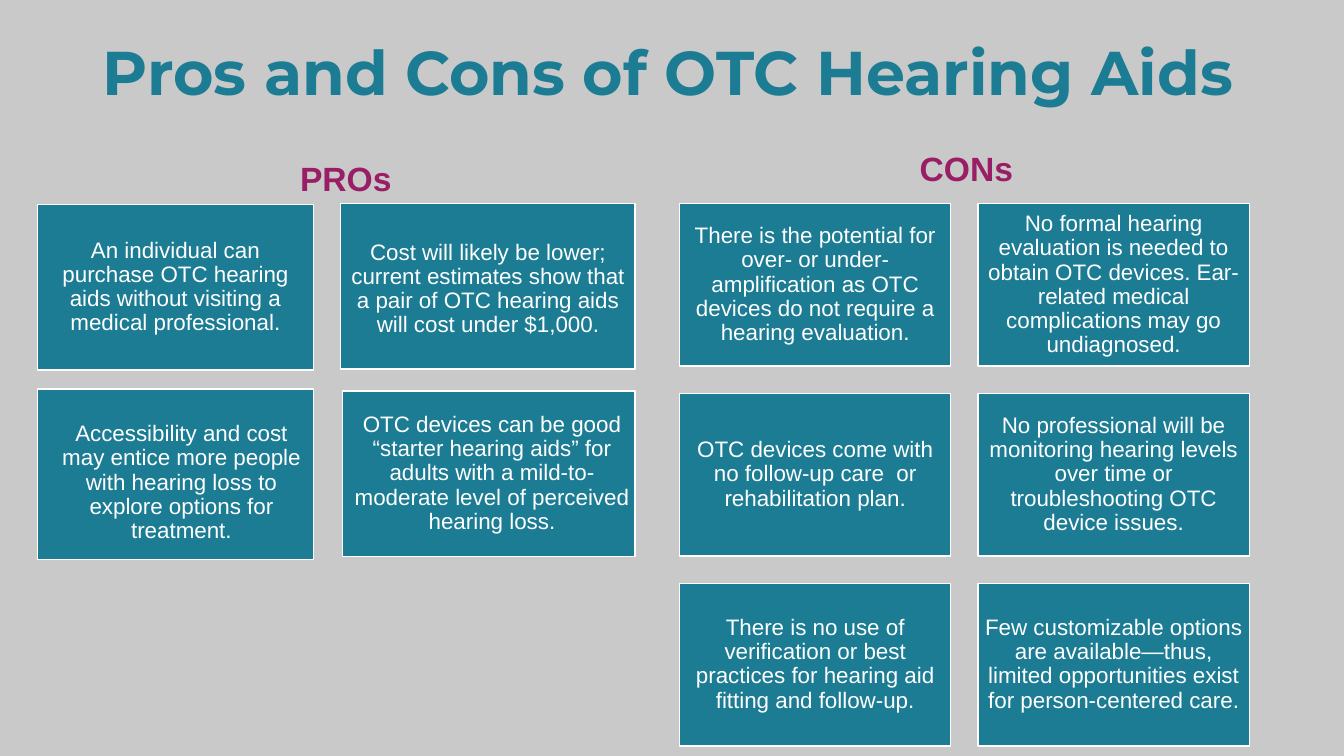
from pptx import Presentation
from pptx.dml.color import RGBColor
from pptx.enum.shapes import MSO_SHAPE
from pptx.enum.text import MSO_ANCHOR, PP_ALIGN
from pptx.util import Inches, Pt

TEAL = RGBColor(0x1B, 0x7C, 0x93)
MAGENTA = RGBColor(0x99, 0x1E, 0x66)
WHITE = RGBColor(0xFF, 0xFF, 0xFF)
GREY = RGBColor(0xC9, 0xC9, 0xC9)

# Each pro: text, place inside the region (left, top, width, height),
# and text margins (left, top, right, bottom)
PROS = [
    ("An individual can purchase OTC hearing aids without visiting a medical professional.",
     (0, 0.01, 2.74, 1.64), (0.06, 0.06, 0.06, 0.06)),
    ("Cost will likely be lower; current estimates show that a pair of OTC hearing aids "
     "will cost under $1,000.",
     (3.01, 0, 2.92, 1.64), (0.06, 0.12, 0.06, 0.06)),
    ("Accessibility and cost may entice more people with hearing loss to explore options "
     "for treatment.",
     (0, 1.84, 2.74, 1.69), (0.17, 0.23, 0.05, 0.06)),
    ("OTC devices can be good “starter hearing aids” for adults with a mild-to-moderate "
     "level of perceived hearing loss.",
     (3.03, 1.86, 2.9, 1.64), (0.06, 0.06, 0, 0.06)),
]
CONS = [
    "There is the potential for over- or under-amplification as OTC devices do not require "
    "a hearing evaluation.",
    "No formal hearing evaluation is needed to obtain OTC devices. Ear-related medical "
    "complications may go undiagnosed.",
    "OTC devices come with no follow-up care  or rehabilitation plan.",
    "No professional will be monitoring hearing levels over time or troubleshooting OTC "
    "device issues.",
    "There is no use of verification or best practices for hearing aid fitting and follow-up.",
    "Few customizable options are available—thus, limited opportunities exist for "
    "person-centered care.",
]


def write(shape, text, size, color, font="Arial", bold=False, align=PP_ALIGN.CENTER,
          anchor=MSO_ANCHOR.MIDDLE, margins=(0.1, 0.05, 0.1, 0.05)):
    frame = shape.text_frame
    frame.text = text
    frame.word_wrap = True
    frame.vertical_anchor = anchor
    (frame.margin_left, frame.margin_top,
     frame.margin_right, frame.margin_bottom) = map(Inches, margins)
    paragraph = frame.paragraphs[0]
    paragraph.alignment = align
    paragraph.line_spacing = 0.9
    for run in paragraph.runs:
        run.font.name, run.font.size, run.font.bold = font, Pt(size), bold
        run.font.color.rgb = color


def add_title(slide, box):
    title = slide.shapes.add_textbox(*map(Inches, box))
    write(title, "Pros and Cons of OTC Hearing Aids", 44.1, TEAL, "Montserrat", True,
          PP_ALIGN.LEFT, MSO_ANCHOR.TOP)


def add_heading(slide, text, box):
    heading = slide.shapes.add_textbox(*map(Inches, box))
    write(heading, text, 24, MAGENTA, bold=True, anchor=MSO_ANCHOR.BOTTOM)


def add_card(slide, text, box, margins):
    card = slide.shapes.add_shape(MSO_SHAPE.RECTANGLE, *map(Inches, box))
    card.shadow.inherit = False
    card.fill.solid()
    card.fill.fore_color.rgb = TEAL
    card.line.color.rgb = WHITE
    card.line.width = Pt(1)
    write(card, text, 16, WHITE, margins=margins)


def add_pros(slide, left, top):
    for text, (dx, dy, width, height), margins in PROS:
        add_card(slide, text, (left + dx, top + dy, width, height), margins)


def add_cons(slide, left, top, width, height, columns=2, gap=0.27):
    """Fill the box with equal cards, row by row."""
    rows = len(CONS) // columns
    card_width = (width - gap * (columns - 1)) / columns
    card_height = (height - gap * (rows - 1)) / rows
    for index, text in enumerate(CONS):
        row, column = divmod(index, columns)
        add_card(slide, text,
                 (left + column * (card_width + gap), top + row * (card_height + gap),
                  card_width, card_height),
                 (0.07,) * 4)


def main():
    deck = Presentation()
    deck.slide_width, deck.slide_height = Inches(13.33), Inches(7.5)
    slide = deck.slides.add_slide(deck.slide_layouts[6])
    slide.background.fill.solid()
    slide.background.fill.fore_color.rgb = GREY
    add_title(slide, (0.92, 0.37, 12.33, 1.45))
    add_heading(slide, "PROs", (0.61, 1.12, 5.64, 0.9))
    add_heading(slide, "CONs", (6.75, 1.02, 5.67, 0.9))
    add_cons(slide, 6.74, 2.02, 5.65, 5.38)
    add_pros(slide, 0.37, 2.02)
    deck.save("out.pptx")


if __name__ == "__main__":
    main()
